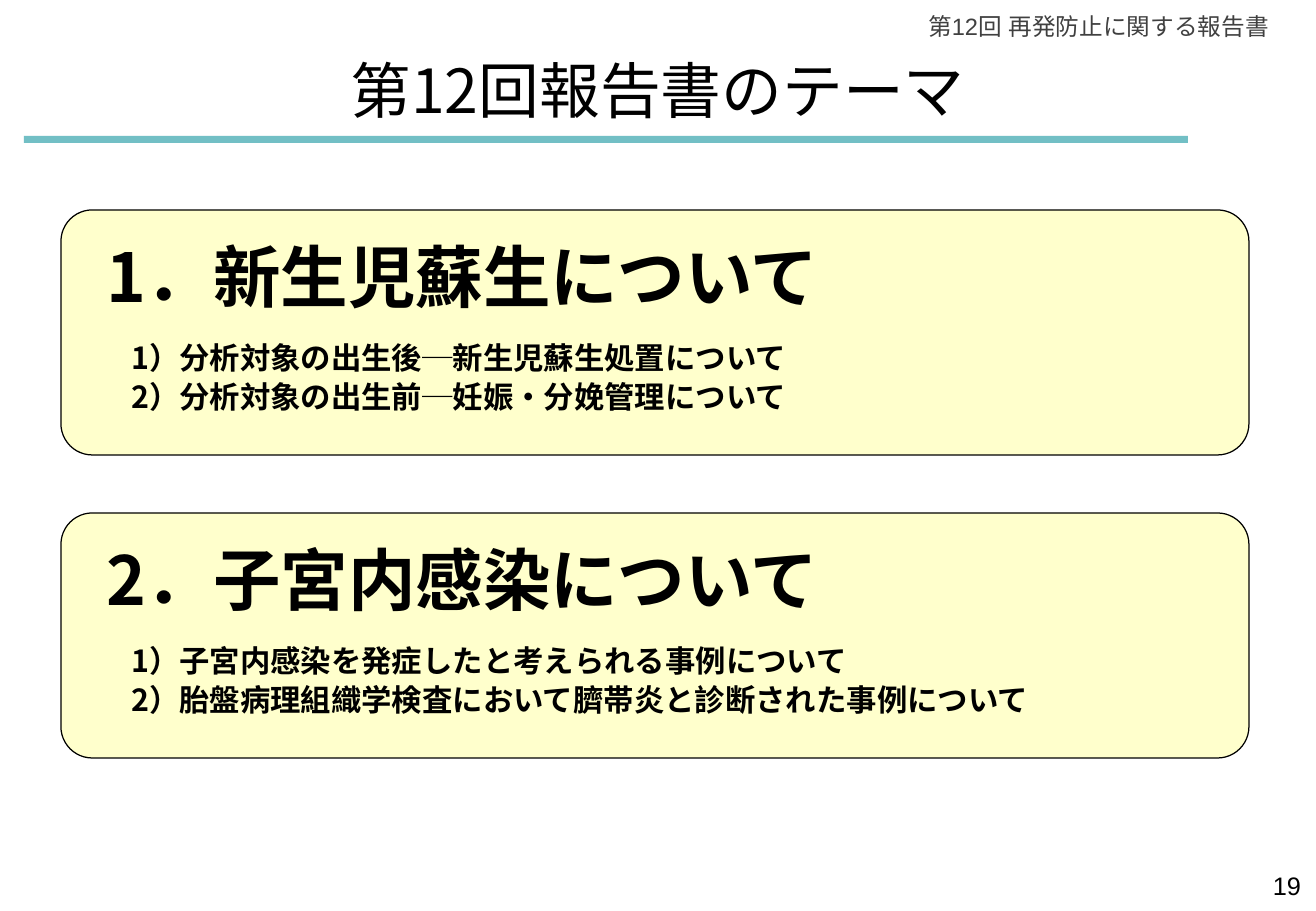
from lxml import etree
from pptx import Presentation
from pptx.dml.color import RGBColor
from pptx.enum.shapes import MSO_SHAPE
from pptx.enum.text import MSO_ANCHOR, MSO_AUTO_SIZE, PP_ALIGN
from pptx.oxml.ns import qn
from pptx.util import Pt

RECT, ROUND = MSO_SHAPE.RECTANGLE, MSO_SHAPE.ROUNDED_RECTANGLE
LEFT, CENTER, RIGHT = PP_ALIGN.LEFT, PP_ALIGN.CENTER, PP_ALIGN.RIGHT
MIDDLE = MSO_ANCHOR.MIDDLE
NO_FIT = MSO_AUTO_SIZE.NONE

BLACK = RGBColor(0x00, 0x00, 0x00)
GRAY = RGBColor(0x40, 0x40, 0x40)
TEAL = RGBColor(0x72, 0xBF, 0xC5)
CREAM = RGBColor(0xFF, 0xFF, 0xCC)

SANS, GOTHIC = "Arial", "Noto Sans CJK JP"
PX = 7526  # EMU in one px
TITLE_ONLY = 5

# Theme boxes: heading and its items
THEMES = [
    ("1．新生児蘇生について",
     ["1）分析対象の出生後─新生児蘇生処置について",
      "2）分析対象の出生前─妊娠・分娩管理について"]),
    ("2．子宮内感染について",
     ["1）子宮内感染を発症したと考えられる事例について",
      "2）胎盤病理組織学検査において臍帯炎と診断された事例について"]),
]
BOX_TOP, BOX_STEP = 210, 303


def px(*nums):
    return [num * PX for num in nums]


def add_run(para, text, size, face, color=BLACK, bold=False):
    run = para.add_run()
    run.text = text
    font = run.font
    font.size, font.name, font.bold = Pt(size), face, bold
    font.color.rgb = color
    # East Asian letters use the same face
    east = etree.Element(qn("a:ea"), typeface=face)
    run._r.rPr.find(qn("a:latin")).addnext(east)


def add_label(slide, area, text, size, color):
    frame = slide.shapes.add_textbox(*px(*area)).text_frame
    frame.word_wrap = True
    para = frame.paragraphs[0]
    para.alignment = RIGHT
    add_run(para, text, size, SANS, color)


def add_block(slide, kind, area, fill):
    shape = slide.shapes.add_shape(kind, *px(*area))
    shape.shadow.inherit = False
    shape.fill.solid()
    shape.fill.fore_color.rgb = fill
    shape.line.fill.background()
    return shape


def add_line(para, text, size, indent, after):
    para._p.get_or_add_pPr().set("marL", str(indent * PX))
    para.alignment = LEFT
    para.line_spacing = 0.8
    para.space_after = Pt(after)
    add_run(para, text, size, GOTHIC, bold=True)


def add_theme(slide, top, head, items):
    box = add_block(slide, ROUND, (61, top, 1188, 245), CREAM)
    box.adjustments[0] = 0.128
    box.line.color.rgb = BLACK
    box.line.width = Pt(0.75)
    frame = box.text_frame
    frame.word_wrap = True
    frame.vertical_anchor = MIDDLE
    add_line(frame.paragraphs[0], head, 40, 24, 18)
    for item in items:
        add_line(frame.add_paragraph(), item, 18, 49, 6)


def set_title(slide, area, text):
    title = slide.shapes.title
    title.left, title.top, title.width, title.height = px(*area)
    frame = title.text_frame
    frame.word_wrap = False
    frame.auto_size = NO_FIT
    frame.vertical_anchor = MIDDLE
    para = frame.paragraphs[0]
    para.alignment = CENTER
    add_run(para, text, 36, GOTHIC)


def main():
    deck = Presentation()
    deck.slide_width, deck.slide_height = px(1316, 911)
    slide = deck.slides.add_slide(deck.slide_layouts[TITLE_ONLY])

    # Header, title and rule
    add_block(slide, RECT, (24, 136, 1164, 7), TEAL)
    add_label(slide, (897, 6, 384, 41), "第12回 再発防止に関する報告書", 14, GRAY)
    set_title(slide, (323, 46, 669, 86), "第12回報告書のテーマ")

    # Page number
    add_label(slide, (1006, 864, 307, 45), "19", 15, BLACK)

    # Themes
    for row, (head, items) in enumerate(THEMES):
        add_theme(slide, BOX_TOP + row * BOX_STEP, head, items)

    deck.save("out.pptx")


if __name__ == "__main__":
    main()
